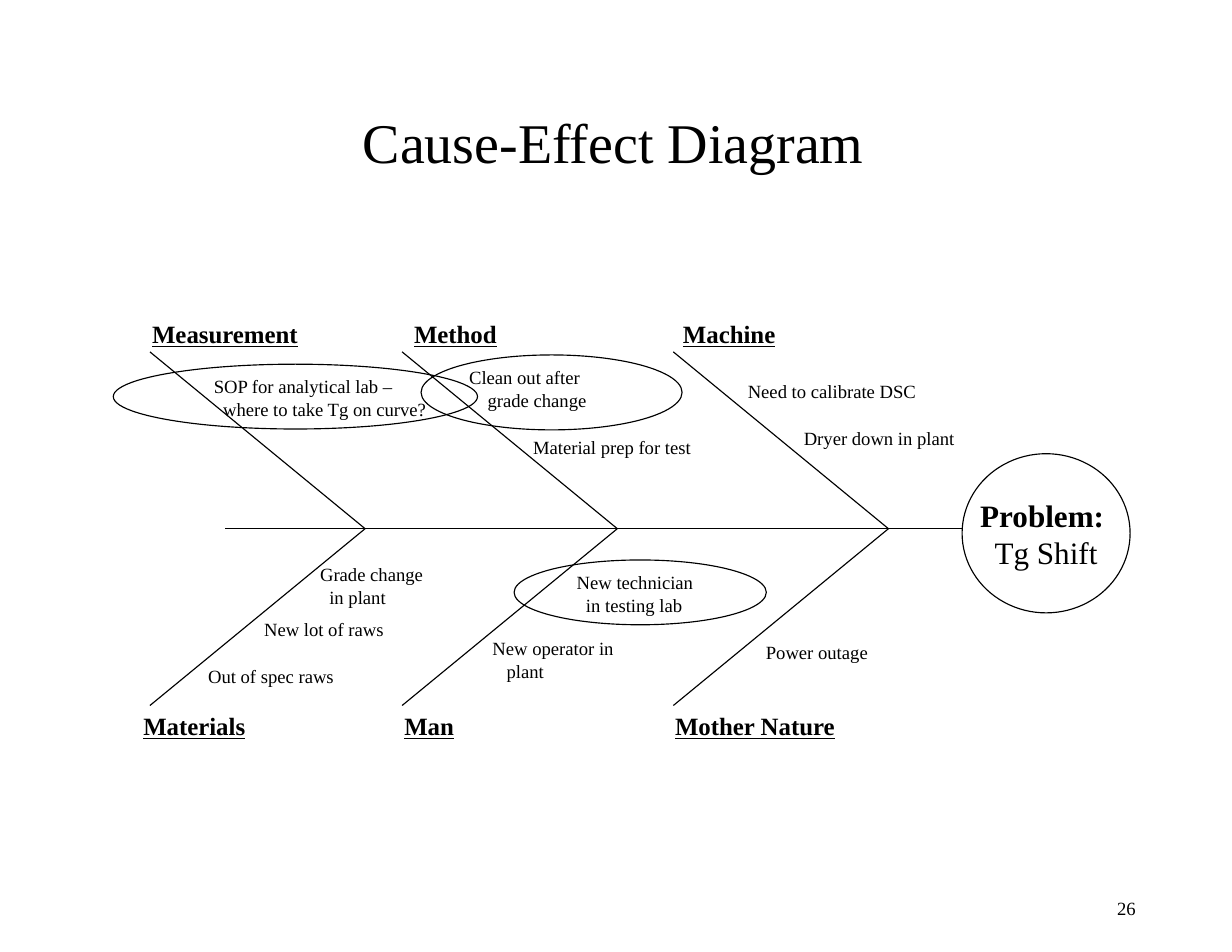
from lxml import etree
from pptx import Presentation
from pptx.dml.color import RGBColor
from pptx.enum.shapes import MSO_CONNECTOR as Link, MSO_SHAPE as Shape
from pptx.enum.text import MSO_ANCHOR as Anchor, MSO_AUTO_SIZE as Fit, PP_ALIGN as Align
from pptx.oxml.ns import qn
from pptx.util import Cm, Pt

BLACK = RGBColor(0, 0, 0)
FONT = "Times New Roman"

SPINE_Y = 11.99
RUN, RISE = 4.88, 4.01
BONES = (3.4, 9.12, 15.27)

# text, left, width
TOP_HEADS = (("Measurement", 3.2, 3.86), ("Method", 9.14, 2.41), ("Machine", 15.24, 2.64))
LOW_HEADS = (("Materials", 3, 2.87), ("Man", 8.92, 1.65), ("Mother Nature", 15.06, 4.19))

# text, left, top, width, indent of the second line
CAUSES = (
    ("SOP for analytical lab –\nwhere to take Tg on curve?", 4.6, 8.38, 5.38, 0.21),
    ("Clean out after\ngrade change", 10.39, 8.18, 3.23, 0.42),
    ("Material prep for test", 11.84, 9.75, 4.14, 0),
    ("Need to calibrate DSC", 16.71, 8.48, 4.37, 0),
    ("Dryer down in plant", 17.98, 9.55, 3.96, 0),
    ("Grade change\nin plant", 7.01, 12.65, 2.87, 0.21),
    ("New lot of raws", 5.74, 13.89, 3.81, 0),
    ("Out of spec raws", 4.47, 14.96, 3.4, 0),
    ("New technician\nin testing lab", 12.83, 12.83, 3.3, 0.21),
    ("New operator in\nplant", 10.92, 14.33, 3.3, 0.32),
    ("Power outage", 17.12, 14.4, 2.84, 0),
)
RINGS = ((2.57, 8.26, 8.26, 1.47), (9.55, 8.05, 5.92, 1.7), (11.66, 12.7, 5.72, 1.47))


def style(frame, size, bold=False, line=False, align=Align.LEFT):
    for para in frame.paragraphs:
        para.alignment = align
        for run in para.runs:
            font = run.font
            font.name, font.size = FONT, Pt(size)
            font.bold, font.underline = bold, line
            font.color.rgb = BLACK


def add_text(slide, text, box, size, **look):
    frame = slide.shapes.add_textbox(*map(Cm, box)).text_frame
    frame.text = text
    frame.word_wrap = False
    frame.auto_size = Fit.SHAPE_TO_FIT_TEXT
    style(frame, size, **look)
    return frame


def add_ring(slide, box):
    ring = slide.shapes.add_shape(Shape.OVAL, *map(Cm, box))
    ring.shadow.inherit = False
    ring.fill.background()
    ring.line.color.rgb = BLACK
    ring.line.width = Pt(0.75)
    return ring


def add_line(slide, *ends):
    line = slide.shapes.add_connector(Link.STRAIGHT, *map(Cm, ends))
    line.line.color.rgb = BLACK
    line.line.width = Pt(0.75)
    etree.SubElement(line._element.spPr, qn("a:effectLst"))


def add_bones(slide):
    add_line(slide, 21.82, SPINE_Y, 5.11, SPINE_Y)
    for left in BONES:
        for rise in (-RISE, RISE):
            add_line(slide, left, SPINE_Y + rise, left + RUN, SPINE_Y)


def add_heads(slide, heads, top):
    for text, left, width in heads:
        add_text(slide, text, (left, top, width, 0.94), 16, bold=True, line=True)


def add_cause(slide, text, left, top, width, indent):
    height = 1.27 if "\n" in text else 0.76
    frame = add_text(slide, text, (left, top, width, height), 12)
    for para in frame.paragraphs[1:]:
        props = para._p.get_or_add_pPr()
        props.set("marL", str(Cm(indent)))
        props.set("indent", "0")


def add_problem(slide):
    frame = add_ring(slide, (21.82, 10.29, 3.81, 3.61)).text_frame
    frame.text = "Problem: \nTg Shift"
    frame.word_wrap = False
    frame.vertical_anchor = Anchor.MIDDLE
    style(frame, 20, align=Align.CENTER)
    frame.paragraphs[0].runs[0].font.bold = True


def add_number(slide):
    frame = add_text(slide, "26", (19.74, 20.02, 6.27, 1.14), 12, align=Align.RIGHT)
    frame.word_wrap = True
    frame.auto_size = Fit.NONE
    frame.vertical_anchor = Anchor.MIDDLE


def main():
    deck = Presentation()
    deck.slide_width, deck.slide_height = Cm(27.94), Cm(21.59)
    slide = deck.slides.add_slide(deck.slide_layouts[6])
    add_text(slide, "Cause-Effect Diagram", (7.98, 2.31, 11.99, 1.8), 36)
    add_problem(slide)
    add_bones(slide)
    add_heads(slide, TOP_HEADS, 7.11)
    add_heads(slide, LOW_HEADS, 16)
    for cause in CAUSES:
        add_cause(slide, *cause)
    for box in RINGS:
        add_ring(slide, box)
    add_number(slide)
    deck.save("out.pptx")


if __name__ == "__main__":
    main()
